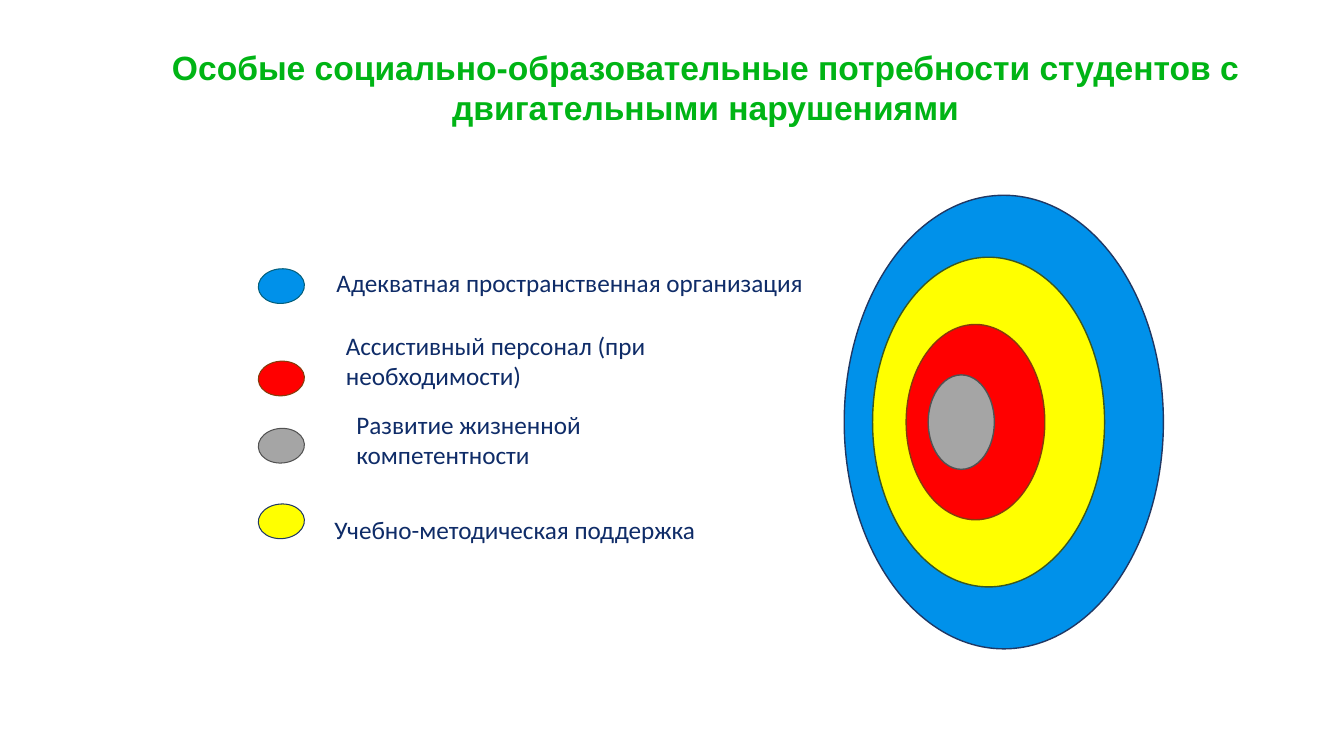
from pptx import Presentation
from pptx.dml.color import RGBColor
from pptx.enum.shapes import MSO_SHAPE as SHAPE
from pptx.enum.text import MSO_ANCHOR as ANCHOR, PP_ALIGN as ALIGN
from pptx.util import Emu, Pt

PX = 9525  # EMU per px, 96 px to the inch

GREEN = RGBColor(0x00, 0xB4, 0x15)
NAVY = RGBColor(0x0F, 0x2C, 0x68)
BLUE = RGBColor(0x00, 0x91, 0xEA)
YELLOW = RGBColor(0xFF, 0xFF, 0x00)
RED = RGBColor(0xFF, 0x00, 0x00)
GREY = RGBColor(0xA5, 0xA5, 0xA5)
BLUE_EDGE = RGBColor(0x20, 0x38, 0x64)
TEAL_EDGE = RGBColor(0x03, 0x5F, 0x7C)
GREEN_EDGE = RGBColor(0x38, 0x57, 0x23)
RED_EDGE = RGBColor(0x84, 0x3C, 0x0B)
GREY_EDGE = RGBColor(0x52, 0x52, 0x52)

# Fill, edge, left offset, width, height; outermost first
RINGS = [
    (BLUE, BLUE_EDGE, 0, 304, 432),
    (YELLOW, GREEN_EDGE, 27, 221, 314),
    (RED, RED_EDGE, 59, 132, 186),
    (GREY, GREY_EDGE, 80, 63, 90),
]

# Fill, edge, swatch top, label box, label paragraphs; relative to the legend
LEGEND = [
    (BLUE, TEAL_EDGE, 11, (65, 0, 511, 43),
     ["Адекватная пространственная организация"]),
    (RED, RED_EDGE, 99, (74, 60, 469, 72),
     ["Ассистивный персонал (при необходимости)"]),
    (GREY, GREY_EDGE, 163, (84, 137, 241, 68),
     ["Развитие жизненной", "компетентности"]),
    (YELLOW, BLUE_EDGE, 235, (63, 235, 382, 43),
     ["Учебно-методическая поддержка"]),
]


def px(*lengths):
    return [Emu(length * PX) for length in lengths]


def add_ellipse(shapes, box, fill, edge, edge_width):
    ellipse = shapes.add_shape(SHAPE.OVAL, *px(*box))
    ellipse.shadow.inherit = False
    ellipse.fill.solid()
    ellipse.fill.fore_color.rgb = fill
    ellipse.line.color.rgb = edge
    ellipse.line.width = Pt(edge_width)
    return ellipse


def add_text(shapes, box, lines, font, size, color, bold=False, align=ALIGN.LEFT):
    frame = shapes.add_textbox(*px(*box)).text_frame
    frame.word_wrap = True
    for index, line in enumerate(lines):
        paragraph = frame.add_paragraph() if index else frame.paragraphs[0]
        paragraph.alignment = align
        run = paragraph.add_run()
        run.text = line
        run.font.name = font
        run.font.size = Pt(size)
        run.font.bold = bold
        run.font.color.rgb = color
    return frame


def add_title(slide, box):
    add_text(slide.shapes, box,
             ["Особые социально-образовательные потребности студентов с "
              "двигательными нарушениями"],
             "Arial", 24, GREEN, bold=True, align=ALIGN.CENTER)


def add_rings(slide, left, top, height):
    """Nested ellipses sharing one horizontal axis."""
    group = slide.shapes.add_group_shape()
    for fill, edge, offset, ring_width, ring_height in RINGS:
        ring_top = top + (height - ring_height) // 2
        add_ellipse(group.shapes, (left + offset, ring_top, ring_width, ring_height),
                    fill, edge, 1)


def add_legend(slide, left, top):
    for fill, edge, swatch_top, (x, y, width, height), lines in LEGEND:
        swatch = add_ellipse(slide.shapes, (left, top + swatch_top, 44, 33),
                             fill, edge, 0.75)
        swatch.rotation = -4.2
        label = add_text(slide.shapes, (left + x, top + y, width, height),
                         lines, "Calibri", 18, NAVY)
        label.vertical_anchor = ANCHOR.MIDDLE
        label.margin_top, label.margin_bottom = px(10, 5)


def main():
    deck = Presentation()
    deck.slide_width, deck.slide_height = px(1280, 720)
    slide = deck.slides.add_slide(deck.slide_layouts[6])
    add_title(slide, (144, 40, 1056, 87))
    add_rings(slide, 804, 186, 432)
    add_legend(slide, 246, 245)
    deck.save("out.pptx")


if __name__ == "__main__":
    main()
